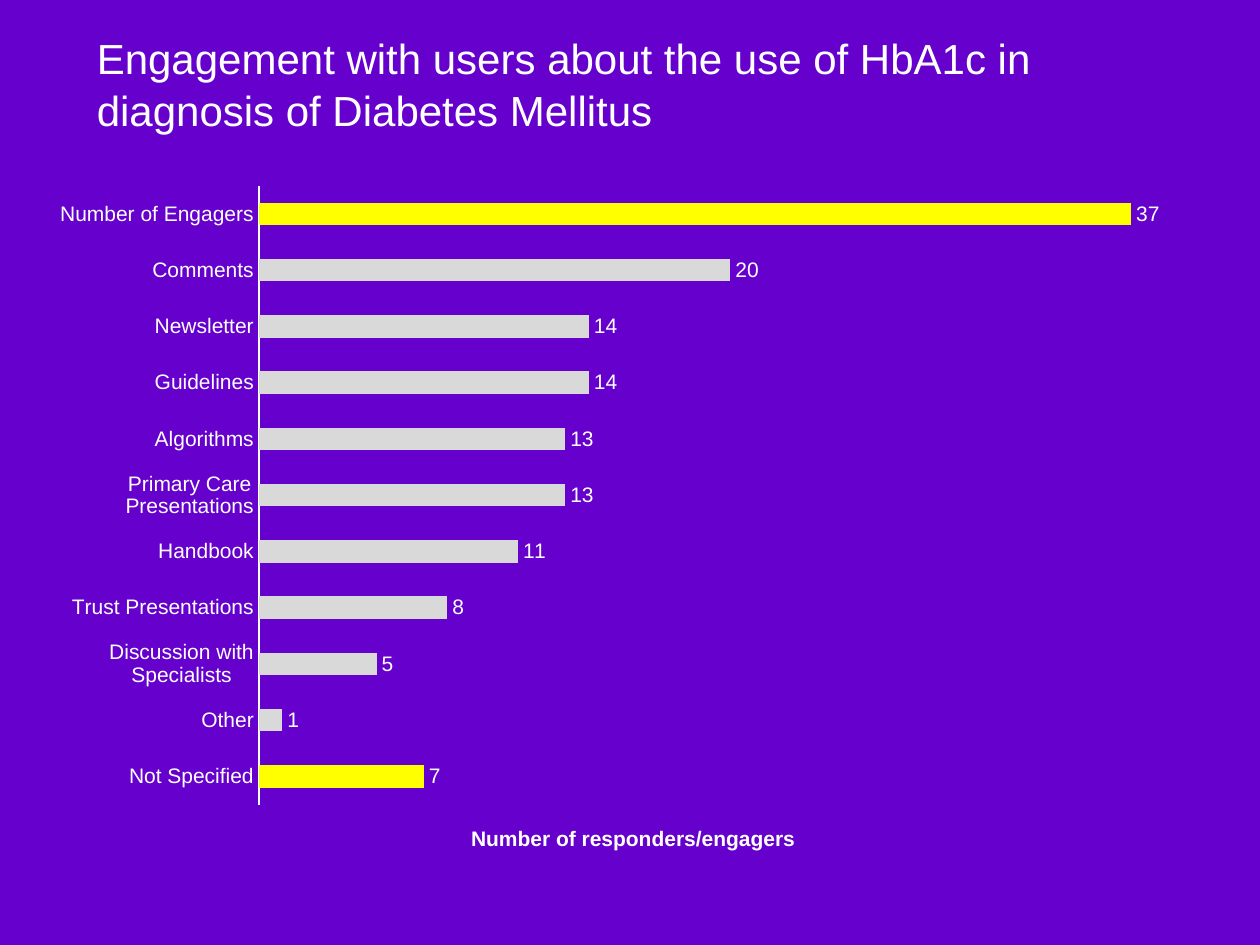
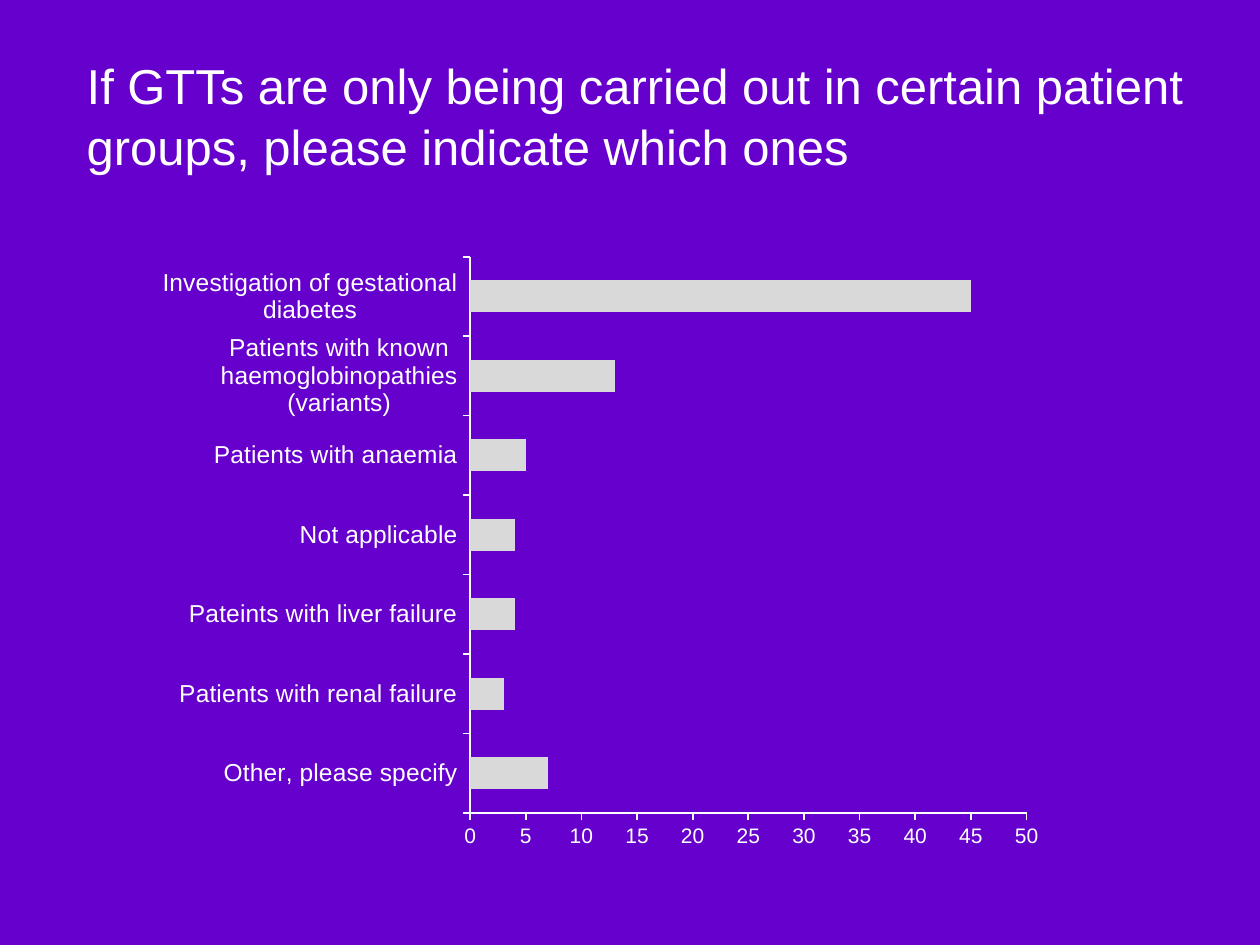
from lxml.etree import SubElement
from pptx import Presentation
from pptx.chart.data import CategoryChartData
from pptx.dml.color import RGBColor
from pptx.enum.chart import XL_CHART_TYPE as ChartType
from pptx.enum.chart import XL_LABEL_POSITION as LabelPosition
from pptx.enum.chart import XL_TICK_LABEL_POSITION as TickLabels
from pptx.enum.chart import XL_TICK_MARK as Tick
from pptx.enum.text import MSO_ANCHOR
from pptx.oxml.ns import qn
from pptx.util import Inches, Pt

PURPLE = RGBColor(0x66, 0x00, 0xCC)
WHITE = RGBColor(0xFF, 0xFF, 0xFF)
GREY = RGBColor(0xD9, 0xD9, 0xD9)
YELLOW = RGBColor(0xFF, 0xFF, 0x00)
FONT = "Arial"

# Content: bars run from bottom to top; boxes are left, top, width, height in
# inches; plot and caption places are shares of the chart's size
SLIDES = [
    {
        "title": "Engagement with users about the use of HbA1c in diagnosis of Diabetes Mellitus",
        "title_box": (0.67, 0.12, 8.8, 1),
        "title_size": 24,
        "bars": [
            ("Not Specified", 7), ("Other", 1),
            ("Discussion with Specialists", 5), ("Trust Presentations", 8),
            ("Handbook", 11), ("Primary Care Presentations", 13),
            ("Algorithms", 13), ("Guidelines", 14), ("Newsletter", 14),
            ("Comments", 20), ("Number of Engagers", 37),
        ],
        "highlights": ("Not Specified", "Number of Engagers"),
        "chart_box": (0.2, 1.47, 9.56, 5.45),
        "plot": (0.194, 0, 0.783, 0.902),
        "label_size": 12,
        "axis_width": 0.75,
        "maximum": 40,
        "show_scale": False,
        "caption": "Number of responders/engagers",
        "caption_place": (0.367, 0.927),
    },
    {
        "title": "If GTTs are only being carried out in certain patient groups, "
                 "please indicate which ones",
        "title_box": (0.59, 0.44, 8.9, 1),
        "title_size": 28,
        "bars": [
            ("Other, please specify", 7), ("Patients with renal failure", 3),
            ("Pateints with liver failure", 4), ("Not applicable", 4),
            ("Patients with anaemia", 5),
            ("Patients with known haemoglobinopathies (variants)", 13),
            ("Investigation of gestational diabetes", 45),
        ],
        "highlights": (),
        "chart_box": (1.14, 1.94, 7.24, 4.89),
        "plot": (0.358, 0.02, 0.61, 0.903),
        "label_size": 14,
        "axis_width": 1,
        "maximum": 50,
        "show_scale": True,
        "caption": None,
    },
]


def style_font(font, size, bold=False):
    font.name, font.size, font.bold = FONT, Pt(size), bold
    font.color.rgb = WHITE


def set_layout(parent, index, place):
    """Fix the place of a chart part as shares of the chart."""
    for old in parent.findall(qn("c:layout")):
        parent.remove(old)
    layout = SubElement(parent, qn("c:layout"))
    parent.insert(index, layout)
    manual = SubElement(layout, qn("c:manualLayout"))
    settings = [("xMode", "edge"), ("yMode", "edge"), *zip("xywh", place)]
    if len(place) == 4:
        settings.insert(0, ("layoutTarget", "inner"))
    for tag, value in settings:
        SubElement(manual, qn(f"c:{tag}")).set("val", str(value))


def add_title(slide, content):
    box = slide.shapes.add_textbox(*map(Inches, content["title_box"]))
    frame = box.text_frame
    frame.word_wrap = True
    frame.vertical_anchor = MSO_ANCHOR.BOTTOM
    frame.margin_right = 0
    paragraph = frame.paragraphs[0]
    paragraph.text = content["title"]
    paragraph.line_spacing = 1.04
    style_font(paragraph.font, content["title_size"])


def style_axis(axis, size, width, tick):
    axis.has_major_gridlines = False
    axis.major_tick_mark, axis.minor_tick_mark = tick, Tick.NONE
    style_font(axis.tick_labels.font, size)
    axis.format.line.color.rgb = WHITE
    axis.format.line.width = Pt(width)


def add_bar_chart(slide, content):
    data = CategoryChartData()
    names, values = zip(*content["bars"])
    data.categories = names
    data.add_series("Series 1", values)
    chart = slide.shapes.add_chart(
        ChartType.BAR_CLUSTERED, *map(Inches, content["chart_box"]), data).chart
    chart.has_legend = chart.has_title = False
    style_font(chart.font, 12)
    set_layout(chart.element.find(".//" + qn("c:plotArea")), 0, content["plot"])

    # Bars
    plot = chart.plots[0]
    plot.gap_width = 150
    plot.vary_by_categories = False
    series = plot.series[0]
    series.format.fill.solid()
    series.format.fill.fore_color.rgb = GREY
    for name in content["highlights"]:
        fill = series.points[names.index(name)].format.fill
        fill.solid()
        fill.fore_color.rgb = YELLOW

    # Axes
    show_scale = content["show_scale"]
    tick = Tick.OUTSIDE if show_scale else Tick.NONE
    style_axis(chart.category_axis, content["label_size"], content["axis_width"], tick)
    scale = chart.value_axis
    style_axis(scale, 12, content["axis_width"], tick)
    scale.minimum_scale, scale.maximum_scale = 0, content["maximum"]
    scale.major_unit = 5

    # Values at the bar ends stand in for a scale
    if not show_scale:
        plot.overlap = -25
        scale.tick_label_position = TickLabels.NONE
        scale.format.line.fill.background()
        plot.has_data_labels = True
        labels = plot.data_labels
        labels.show_value = True
        labels.position = LabelPosition.OUTSIDE_END
        style_font(labels.font, 12)

    if content["caption"]:
        caption = scale.axis_title
        paragraph = caption.text_frame.paragraphs[0]
        paragraph.text = content["caption"]
        style_font(paragraph.font, 12, bold=True)
        set_layout(caption.element, 1, content["caption_place"])


def main():
    deck = Presentation()
    deck.slide_width, deck.slide_height = Inches(10), Inches(7.5)
    for content in SLIDES:
        slide = deck.slides.add_slide(deck.slide_layouts[6])
        slide.background.fill.solid()
        slide.background.fill.fore_color.rgb = PURPLE
        add_title(slide, content)
        add_bar_chart(slide, content)
    deck.save("out.pptx")


if __name__ == "__main__":
    main()
